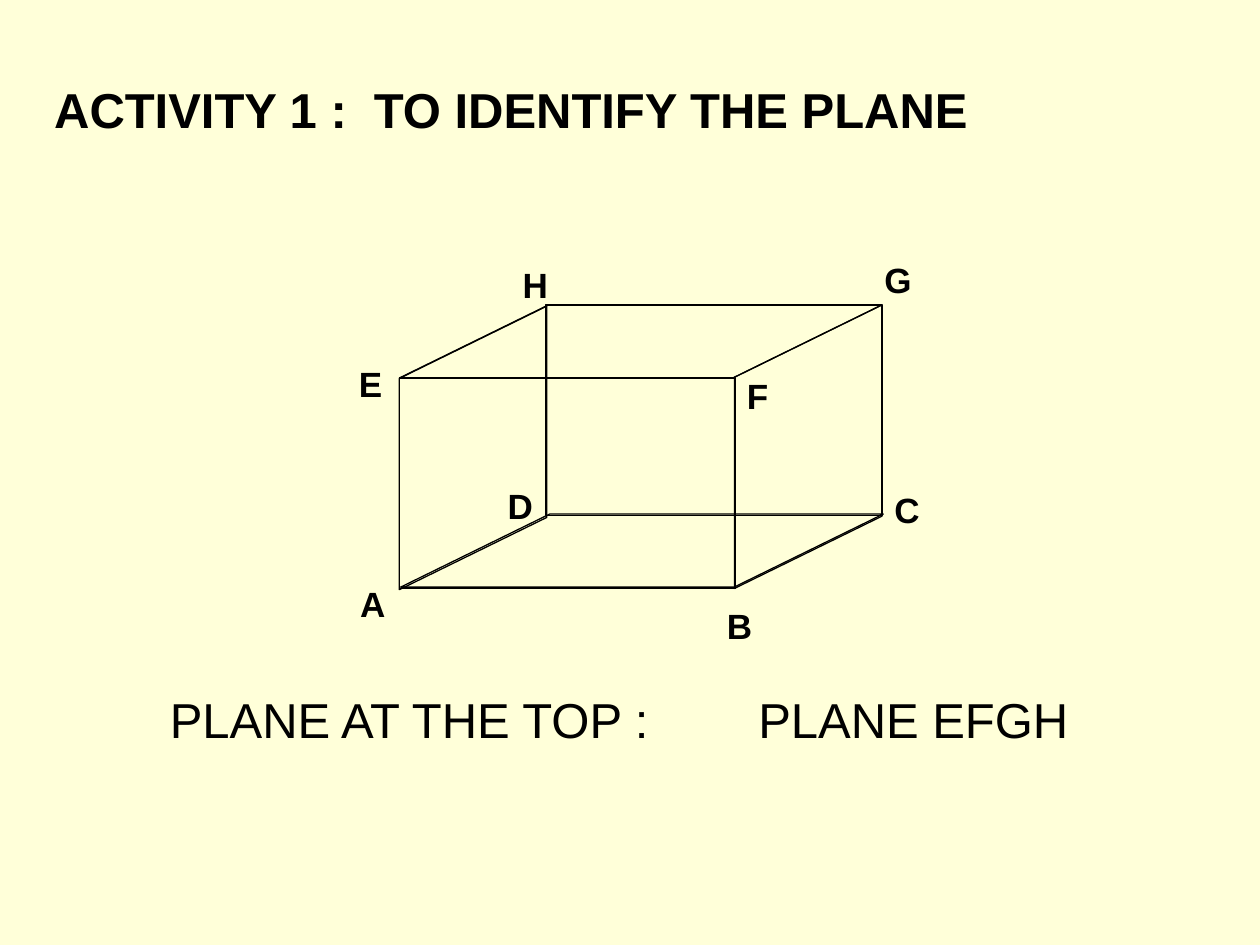
"""Build the slide on identifying the top plane of a cuboid."""
import pptx
import pptx.dml.color
import pptx.enum.shapes
import pptx.enum.text
import pptx.util
from pptx.util import Inches

BLACK = pptx.dml.color.RGBColor(0x00, 0x00, 0x00)
CREAM = pptx.dml.color.RGBColor(0xFF, 0xFF, 0xD9)
RECTANGLE = pptx.enum.shapes.MSO_SHAPE.RECTANGLE
PARALLELOGRAM = pptx.enum.shapes.MSO_SHAPE.PARALLELOGRAM


def write_text(shape, text, size, bold):
    frame = shape.text_frame
    frame.text = text
    frame_format = {
        "word_wrap": True,
        "auto_size": pptx.enum.text.MSO_AUTO_SIZE.SHAPE_TO_FIT_TEXT,
        "vertical_anchor": pptx.enum.text.MSO_ANCHOR.TOP,
    }
    for name, value in frame_format.items():
        setattr(frame, name, value)
    paragraph = frame.paragraphs[0]
    paragraph.alignment = pptx.enum.text.PP_ALIGN.LEFT
    font = paragraph.runs[0].font
    font_format = {"name": "Arial", "size": pptx.util.Pt(size), "bold": bold}
    for name, value in font_format.items():
        setattr(font, name, value)
    font.color.rgb = BLACK


presentation = pptx.Presentation()
presentation.slide_width = Inches(10)
presentation.slide_height = Inches(7.5)
slide = presentation.slides.add_slide(presentation.slide_layouts[5])
slide.background.fill.solid()
slide.background.fill.fore_color.rgb = CREAM

title = slide.shapes.title
title_position = {"left": 0.33, "top": 0.58, "width": 8.58, "height": 0.57}
for name, value in title_position.items():
    setattr(title, name, Inches(value))
write_text(title, "ACTIVITY 1 :  TO IDENTIFY THE PLANE", 28, True)

front_size = (2.67, 1.67)
level_size = (3.83, 0.58)
side_size = (2.25, 1.17)
faces = [
    (PARALLELOGRAM, (3.17, 2.42), level_size, 2.04, False),
    (RECTANGLE, (3.17, 3), front_size, None, False),
    (PARALLELOGRAM, (5.29, 2.96), side_size, 0.49, True),
    (PARALLELOGRAM, (2.63, 2.97), side_size, 0.49, True),
    (RECTANGLE, (4.33, 2.42), front_size, None, False),
    (PARALLELOGRAM, (3.18, 4.08), level_size, 2.04, False),
]
for kind, position, size, slant, upright in faces:
    face = slide.shapes.add_shape(kind, *map(Inches, position + size))
    face.shadow.inherit = False
    face.fill.background()
    face.line.color.rgb = BLACK
    face.line.width = pptx.util.Pt(0.75)
    if slant is not None:
        face.adjustments[0] = slant
    if upright:
        face.rotation = 90
        face._element.spPr.xfrm.set("flipH", "1")

vertices = {
    "A": (2.76, 4.57),
    "B": (5.67, 4.75),
    "C": (7, 3.83),
    "D": (3.93, 3.8),
    "E": (2.75, 2.83),
    "F": (5.83, 2.92),
    "G": (6.92, 2),
    "H": (4.05, 2.04),
}
labels = [(text, position, (0.5, 0.43), 20, True) for text, position in vertices.items()]
labels += [
    ("PLANE AT THE TOP :", (1.25, 5.42), (4.33, 0.57), 28, False),
    ("PLANE EFGH", (5.92, 5.42), (2.83, 0.57), 28, False),
]
for text, position, size, font_size, bold in labels:
    label = slide.shapes.add_textbox(*map(Inches, position + size))
    write_text(label, text, font_size, bold)

presentation.save("out.pptx")
